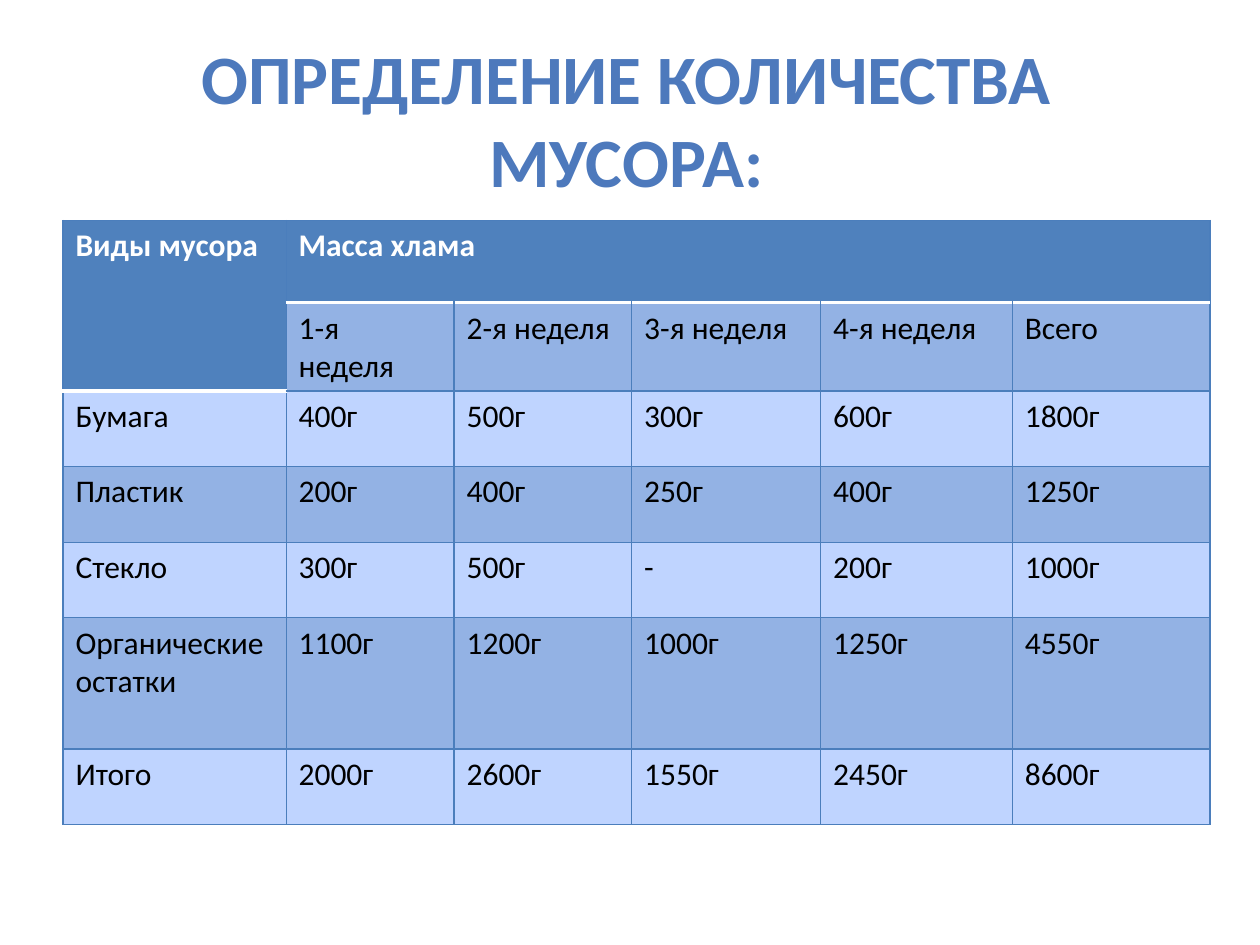
from lxml.etree import SubElement
from pptx import Presentation
from pptx.dml.color import RGBColor
from pptx.enum.text import MSO_ANCHOR, PP_ALIGN
from pptx.oxml.ns import qn
from pptx.util import Pt

FONT = "Calibri"
TITLE_BLUE = "4D79BC"
HEADER_BLUE = "4F81BD"
BANDS = ("BFD4FF", "93B2E4")
BORDER_BLUE = "4B7EBC"
WHITE, BLACK = "FFFFFF", "000000"

COLUMN_WIDTHS = (127.5, 96, 101.5, 108, 109.5, 113)
ROW_HEIGHTS = (47, 41, 43.2, 43.2, 43.2, 75, 43.2)
ROWS = (
    ("Виды мусора", "Масса хлама", "", "", "", ""),
    ("", "1-я неделя", "2-я неделя", "3-я неделя", "4-я неделя", "Всего"),
    ("Бумага", "400г", "500г", "300г", "600г", "1800г"),
    ("Пластик", "200г", "400г", "250г", "400г", "1250г"),
    ("Стекло", "300г", "500г", "-", "200г", "1000г"),
    ("Органические остатки", "1100г", "1200г", "1000г", "1250г", "4550г"),
    ("Итого", "2000г", "2600г", "1550г", "2450г", "8600г"),
)


def color(value):
    return RGBColor.from_string(value)


def add_span(para, text, size, text_color, bold):
    span = para.add_run()
    span.text = text
    span.font.name = FONT
    span.font.size = Pt(size)
    span.font.bold = bold
    span.font.color.rgb = color(text_color)


def add_title(page, text):
    box = page.shapes.add_textbox(Pt(34), Pt(22.5), Pt(648), Pt(90))
    frame = box.text_frame
    frame.word_wrap = True
    frame.vertical_anchor = MSO_ANCHOR.MIDDLE
    para = frame.paragraphs[0]
    para.alignment = PP_ALIGN.CENTER
    add_span(para, text, 39.6, TITLE_BLUE, True)


def add_border(cell, side, line_color, width):
    line = SubElement(cell._tc.get_or_add_tcPr(), qn(f"a:ln{side}"), w=str(Pt(width)))
    fill = SubElement(line, qn("a:solidFill"))
    SubElement(fill, qn("a:srgbClr"), val=line_color)


def style_cell(cell, row, column):
    # The header covers the top row and the first two rows of column one
    is_header = row == 0 or (row == 1 and column == 0)
    header_end = 1 if column == 0 else 0
    white_sides = {"T"} if row == header_end + 1 else set()
    if is_header and (row == header_end or cell.is_merge_origin):
        white_sides.add("B")
    # Borders come before the fill in the cell properties
    for side in "LRTB":
        if side in white_sides:
            add_border(cell, side, WHITE, 2)
        else:
            add_border(cell, side, BORDER_BLUE, 0.75)
    cell.fill.solid()
    cell.fill.fore_color.rgb = color(HEADER_BLUE if is_header else BANDS[row % 2])
    return is_header


def add_waste_table(page):
    frame = page.shapes.add_table(
        len(ROWS), len(COLUMN_WIDTHS), Pt(36), Pt(126),
        Pt(sum(COLUMN_WIDTHS)), Pt(sum(ROW_HEIGHTS)))
    table = frame.table
    for column, width in zip(table.columns, COLUMN_WIDTHS):
        column.width = Pt(width)
    for row, height in zip(table.rows, ROW_HEIGHTS):
        row.height = Pt(height)

    # Merged header cells
    table.cell(0, 0).merge(table.cell(1, 0))
    table.cell(0, 1).merge(table.cell(0, 5))

    for row, texts in enumerate(ROWS):
        for column, text in enumerate(texts):
            cell = table.cell(row, column)
            is_header = style_cell(cell, row, column)
            if text:
                add_span(cell.text_frame.paragraphs[0], text, 18,
                         WHITE if is_header else BLACK, is_header)


def main():
    deck = Presentation()
    deck.slide_width, deck.slide_height = Pt(720), Pt(540)
    page = deck.slides.add_slide(deck.slide_layouts[6])
    add_title(page, "ОПРЕДЕЛЕНИЕ КОЛИЧЕСТВА МУСОРА:")
    add_waste_table(page)
    deck.save("out.pptx")


if __name__ == "__main__":
    main()
